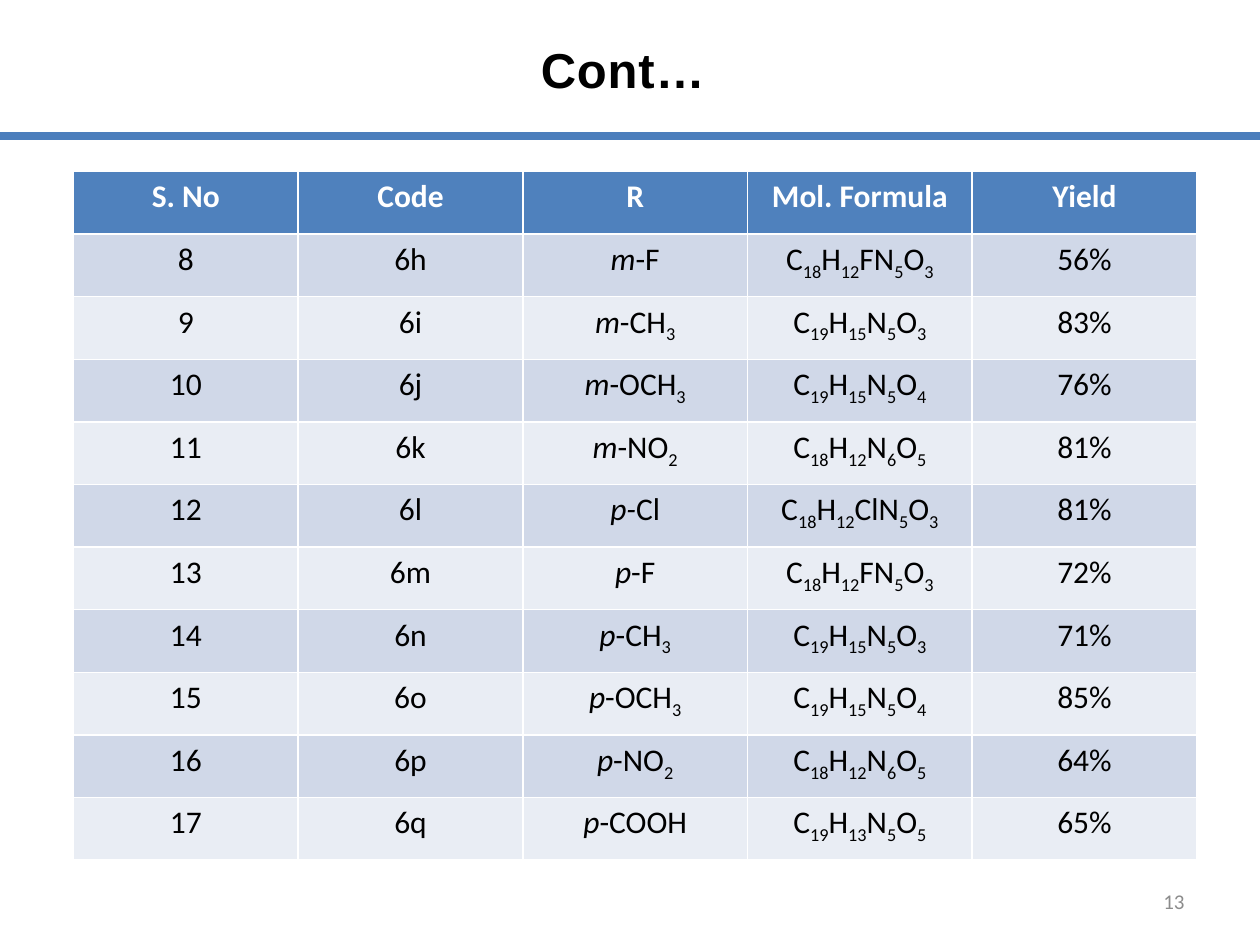
from itertools import groupby

from lxml import etree
from pptx import Presentation, util as u
from pptx.dml import color
from pptx.enum import shapes, text
from pptx.oxml import ns

COLOURS = {
    "rule": "4B7EBC",
    "header": "4F81BD",
    "dark band": "D0D8E8",
    "light band": "E9EDF4",
    "white": "FFFFFF",
    "black": "000000",
    "outline": "101A26",
    "page number": "8C8C8C",
}
HEADINGS = ["S. No", "Code", "R", "Mol. Formula", "Yield"]
FIRST_NUMBER = 8
COMPOUNDS = [
    ("6h", ("m", "-F"), "C18H12FN5O3", "56%"),
    ("6i", ("m", "-CH3"), "C19H15N5O3", "83%"),
    ("6j", ("m", "-OCH3"), "C19H15N5O4", "76%"),
    ("6k", ("m", "-NO2"), "C18H12N6O5", "81%"),
    ("6l", ("p-", "Cl"), "C18H12ClN5O3", "81%"),
    ("6m", ("p", "-F"), "C18H12FN5O3", "72%"),
    ("6n", ("p", "-CH3"), "C19H15N5O3", "71%"),
    ("6o", ("p", "-OCH3"), "C19H15N5O4", "85%"),
    ("6p", ("p", "-NO2"), "C18H12N6O5", "64%"),
    ("6q", ("p", "-COOH"), "C19H13N5O5", "65%"),
]


def rgb(name):
    return color.RGBColor.from_string(COLOURS[name])


def place(shape, box):
    shape.left, shape.top, shape.width, shape.height = (u.Pt(n) for n in box)


def add_span(para, words, size, colour, font="Calibri", bold=False, italic=False):
    span = para.add_run()
    span.text = words
    span.font.name = font
    span.font.size = u.Pt(size)
    span.font.bold = bold
    span.font.italic = italic
    span.font.color.rgb = rgb(colour)
    return span


def add_formula(para, formula):
    for is_digit, letters in groupby(formula, str.isdigit):
        span = add_span(para, "".join(letters), 18, "black")
        if is_digit:
            span.font._element.set("baseline", "-25000")


def add_outline_and_shadow(span):
    properties = span.font._element
    properties.set("spc", "50")
    outline = etree.Element(ns.qn("a:ln"), w=str(u.Pt(1.06)))
    effects = etree.Element(ns.qn("a:effectLst"))
    shadow = etree.SubElement(
        effects, ns.qn("a:outerShdw"), blurRad=str(u.Pt(4)), dist=str(u.Pt(3)), dir="5400000"
    )
    fill = etree.SubElement(outline, ns.qn("a:solidFill"))
    for parent, name, alpha in ((fill, "outline", "6000"), (shadow, "black", "40000")):
        tint = etree.SubElement(parent, ns.qn("a:srgbClr"), val=COLOURS[name])
        etree.SubElement(tint, ns.qn("a:alpha"), val=alpha)
    properties.insert(0, outline)
    properties.find(ns.qn("a:solidFill")).addnext(effects)


def add_heading(page, box):
    left, top, width, height = box
    rule = page.shapes.add_connector(
        shapes.MSO_CONNECTOR.STRAIGHT,
        u.Pt(left), u.Pt(top + height), u.Pt(left + width), u.Pt(top + height),
    )
    rule.line.color.rgb = rgb("rule")
    rule.line.width = u.Pt(4.5)
    etree.SubElement(rule._element.spPr, ns.qn("a:effectLst"))

    title = page.shapes.title
    place(title, (left, top + 18.7, width, 41))
    title.text_frame.auto_size = text.MSO_AUTO_SIZE.SHAPE_TO_FIT_TEXT
    para = title.text_frame.paragraphs[0]
    para.alignment = text.PP_ALIGN.CENTER
    add_outline_and_shadow(add_span(para, "Cont… ", 28, "black", "Arial", bold=True))


def start_cell(cell, fill):
    cell.fill.solid()
    cell.fill.fore_color.rgb = rgb(fill)
    para = cell.text_frame.paragraphs[0]
    para.alignment = text.PP_ALIGN.CENTER
    return para


def add_compound_table(page, box):
    rows, columns = len(COMPOUNDS) + 1, len(HEADINGS)
    table = page.shapes.add_table(rows, columns, *(u.Pt(n) for n in box)).table
    for column, heading in enumerate(HEADINGS):
        para = start_cell(table.cell(0, column), "header")
        add_span(para, heading, 18, "white", bold=True)

    for row, (code, (position, group), formula, yield_share) in enumerate(COMPOUNDS, 1):
        band = "dark band" if row % 2 else "light band"
        number, label, substituent, molecule, share = (
            start_cell(table.cell(row, column), band) for column in range(columns)
        )
        add_span(number, str(FIRST_NUMBER + row - 1), 18, "black")
        add_span(label, code, 18, "black")
        add_span(substituent, position, 18, "black", italic=True)
        add_formula(substituent, group)
        add_formula(molecule, formula)
        add_span(share, yield_share, 18, "black")


def add_page_number(page, box):
    frame = page.shapes.add_textbox(*(u.Pt(n) for n in box)).text_frame
    frame.word_wrap = True
    frame.vertical_anchor = text.MSO_ANCHOR.MIDDLE
    para = frame.paragraphs[0]
    para.alignment = text.PP_ALIGN.RIGHT
    add_span(para, "13", 12, "page number")


def main():
    deck = Presentation()
    deck.slide_width, deck.slide_height = u.Pt(720), u.Pt(540)
    page = deck.slides.add_slide(deck.slide_layouts[5])
    add_heading(page, (0, 0, 720, 77.8))
    add_compound_table(page, (42, 98, 642, 393.8))
    add_page_number(page, (516, 500.5, 168, 28.75))
    deck.save("out.pptx")


if __name__ == "__main__":
    main()
